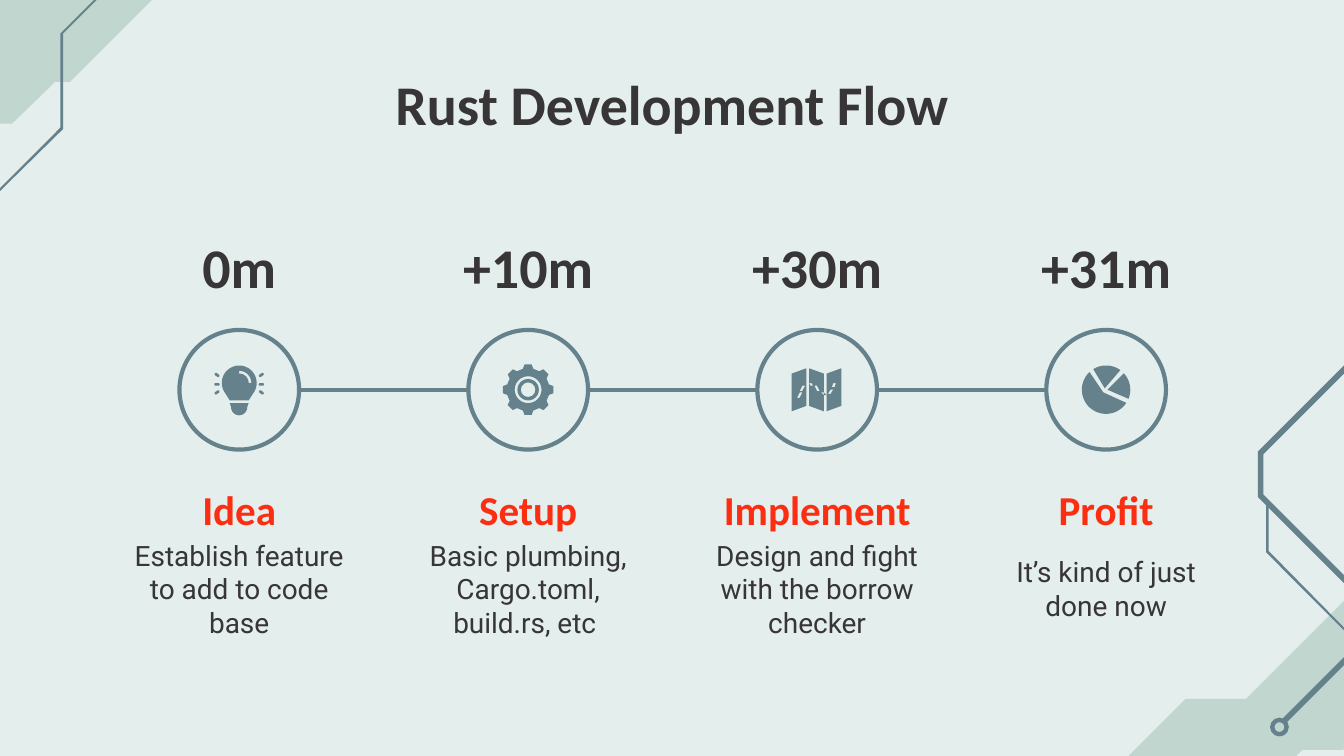
from dataclasses import dataclass
from math import cos, radians, sin

from lxml import etree
from pptx import Presentation
from pptx.dml.color import RGBColor
from pptx.enum import shapes, text
from pptx.oxml import ns
from pptx.util import Inches, Pt


@dataclass(frozen=True)
class Theme:
    bg: str = "E3EEED"
    mint: str = "C1D6CE"
    slate: str = "64818C"
    ink: str = "383536"
    red: str = "FC2E12"
    head: str = "Calibri"
    body: str = "Roboto"
    title: float = 30
    step: float = 22
    note: float = 15
    line: float = 2.25


T = Theme()


def write(tf, words, size=T.note, font=T.body, color=T.ink, bold=False,
          anchor=text.MSO_ANCHOR.MIDDLE):
    """Fill a text frame with one centred paragraph."""
    tf.word_wrap = True
    tf.auto_size = text.MSO_AUTO_SIZE.NONE
    tf.vertical_anchor = anchor
    tf.margin_left = tf.margin_right = tf.margin_top = tf.margin_bottom = Inches(0.1)
    p = tf.paragraphs[0]
    p.alignment = text.PP_ALIGN.CENTER
    r = p.add_run()
    r.text = words
    r.font.size, r.font.name, r.font.bold = Pt(size), font, bold
    r.font.color.rgb = RGBColor.from_string(color)


def arc(cx, cy, radius, start, end, n=24):
    """Points on a circle, in degrees clockwise from the right."""
    angles = [radians(start + (end - start) * i / n) for i in range(n + 1)]
    return [(cx + radius * cos(a), cy + radius * sin(a)) for a in angles]


class Deck:
    def __init__(self, theme, width):
        self.theme = theme
        self.prs = Presentation()
        self.prs.slide_width = Inches(width)
        self.prs.slide_height = Inches(width * 9 / 16)
        self.s = None

    def slide(self):
        self.s = self.prs.slides.add_slide(self.prs.slide_layouts[5])
        fill = self.s.background.fill
        fill.solid()
        fill.fore_color.rgb = RGBColor.from_string(self.theme.bg)

    def title(self, words, x, y, w, h):
        sp = self.s.shapes.title
        sp.left, sp.top, sp.width, sp.height = map(Inches, (x, y, w, h))
        write(sp.text_frame, words, size=self.theme.title, font=self.theme.head,
              bold=True, anchor=text.MSO_ANCHOR.TOP)

    def label(self, words, x, y, w, h, **fmt):
        sp = self.s.shapes.add_textbox(*map(Inches, (x, y, w, h)))
        write(sp.text_frame, words, **fmt)

    def paint(self, sp, fill=None, line=None):
        sp.shadow.inherit = False
        if fill:
            sp.fill.solid()
            sp.fill.fore_color.rgb = RGBColor.from_string(fill)
        else:
            sp.fill.background()
        if line:
            sp.line.color.rgb = RGBColor.from_string(line)
            sp.line.width = Pt(self.theme.line)
        else:
            sp.line.fill.background()

    def shape(self, kind, x, y, w, h, fill=None, line=None):
        sp = self.s.shapes.add_shape(kind, *map(Inches, (x, y, w, h)))
        self.paint(sp, fill, line)
        return sp

    def outline(self, *contours, fill=T.slate):
        """One filled freeform; contours after the first cut holes."""
        loops = [[(Inches(x), Inches(y)) for x, y in c] for c in contours]
        fb = self.s.shapes.build_freeform(*loops[0][0])
        fb.add_line_segments(loops[0][1:])
        for loop in loops[1:]:
            fb.move_to(*loop[0])
            fb.add_line_segments(loop[1:])
        self.paint(fb.convert_to_shape(), fill)

    def line(self, x1, y1, x2, y2):
        cx = self.s.shapes.add_connector(
            shapes.MSO_CONNECTOR.STRAIGHT, *map(Inches, (x1, y1, x2, y2)))
        cx.line.color.rgb = RGBColor.from_string(self.theme.slate)
        cx.line.width = Pt(self.theme.line)
        etree.SubElement(cx._element.spPr, ns.qn("a:effectLst"))


def corners(d):
    # Top left
    d.outline([(1.19, -0.72), (0.65, -0.18), (0.16, -0.18), (-0.94, 0.92),
               (0.09, 0.92), (0.41, 0.61), (0.52, 0.61), (1.85, -0.72)], fill=T.mint)
    d.outline([(1.21, -0.51), (0.45, 0.25), (0.45, 0.95), (-0.12, 1.52),
               (-0.11, 1.53), (0.47, 0.96), (0.47, 0.25), (1.22, -0.5)])
    # Bottom right
    d.outline([(10.27, 4.2), (9.27, 5.2), (8.82, 5.2), (8.25, 5.77), (8.25, 6.03),
               (7.89, 6.39), (8.87, 6.39), (9.69, 5.58), (9.99, 5.58),
               (10.58, 4.99), (10.58, 4.83), (11.21, 4.2)], fill=T.mint)
    d.outline([(12.18, 1.32), (11.21, 2.29), (10.43, 2.29), (9.36, 3.36), (9.36, 3.7),
               (10.01, 4.35), (10.01, 4.88), (9.53, 5.36), (9.56, 5.39), (10.05, 4.9),
               (10.05, 4.33), (9.4, 3.68), (9.4, 3.38), (10.45, 2.33),
               (11.22, 2.33), (12.21, 1.34)])
    d.outline([(9.42, 3.74), (9.42, 4.11), (10.02, 4.71), (10.03, 4.7),
               (9.44, 4.1), (9.44, 3.74)])
    sp = d.shape(shapes.MSO_SHAPE.DONUT, 9.45, 5.34, 0.14, 0.14, T.slate)
    sp.adjustments[0] = 0.24


# Icons, each drawn around the centre of its circle
def bulb(d, x, y):
    cy = y - 0.05
    d.outline(arc(x, cy, 0.13, 140, 400) + [(x + 0.07, y + 0.08), (x - 0.07, y + 0.08)],
              arc(x, cy, 0.09, -90, 0) + arc(x, cy, 0.07, 0, -90))
    d.outline([(x - 0.07, y + 0.1), (x + 0.07, y + 0.1)]
              + arc(x, y + 0.13, 0.06, 0, 180))
    for side in (-1, 1):
        for dy, turn in ((-0.11, -35), (-0.04, 0), (0.02, 35)):
            sp = d.shape(shapes.MSO_SHAPE.ROUNDED_RECTANGLE,
                         x + side * 0.165 - 0.02, y + dy - 0.01, 0.04, 0.02, T.slate)
            sp.adjustments[0] = 0.5
            sp.rotation = side * turn


def gear(d, x, y):
    rim = [arc(x, y, radius, 45 * k + a, 45 * k + a, 1)[0]
           for k in range(8)
           for a, radius in ((-14, 0.16), (-8, 0.19), (8, 0.19), (14, 0.16))]
    d.outline(rim, arc(x, y, 0.1, 0, 360))
    sp = d.shape(shapes.MSO_SHAPE.DONUT, x - 0.08, y - 0.08, 0.16, 0.16, T.slate)
    sp.adjustments[0] = 0.16


def folded_map(d, x, y):
    def dash(dx, dy, w, h):
        px, py = x + dx, y + dy
        return [(px, py), (px + 0.02, py), (px + 0.02 + w, py + h), (px + w, py + h)]

    panels = (
        (-0.19, -0.12, -0.16, [(-0.11, -0.03, -0.02, 0.04), (-0.13, 0.02, -0.02, 0.04)]),
        (-0.06, -0.16, -0.12, [(-0.06, -0.05, 0.01, 0.02), (-0.02, -0.03, 0.02, 0.04),
                               (0.03, 0.02, 0.02, 0.02)]),
        (0.07, -0.12, -0.16, [(0.12, -0.05, -0.01, 0.03), (0.1, 0, -0.02, 0.03)]),
    )
    for dx, left, right, dashes in panels:
        x1, x2 = x + dx, x + dx + 0.11
        d.outline([(x1, y + left), (x2, y + right), (x2, y + right + 0.28),
                   (x1, y + left + 0.28)], *[dash(*m) for m in dashes])


def pie(d, x, y):
    for dx, dy, start, end in ((-0.02, 0.02, 33, 227), (-0.01, -0.01, 238, 306),
                               (0.01, 0, -43, 22)):
        d.outline(arc(x, y, 0.18, start, end) + [(x + dx, y + dy)])


STEPS = [
    ("0m", "Idea", "Establish feature to add to code base", bulb),
    ("+10m", "Setup", "Basic plumbing, Cargo.toml, build.rs, etc ", gear),
    ("+30m", "Implement", "Design and fight with the borrow checker", folded_map),
    ("+31m", "Profit", "It’s kind of just done now", pie),
]


def main():
    d = Deck(T, 10)
    d.slide()
    corners(d)
    d.title("Rust Development Flow", 0.79, 0.42, 8.42, 0.65)

    # Timeline
    first, pitch, y, size = 1.78, 2.15, 2.9, 0.89
    for i, (time, name, note, icon) in enumerate(STEPS):
        x = first + i * pitch
        if i:
            d.line(x - pitch + size / 2, y, x - size / 2, y)
        d.shape(shapes.MSO_SHAPE.OVAL, x - size / 2, y - size / 2, size, size, line=T.slate)
        icon(d, x, y)
        d.label(time, x - 0.84, 1.69, 1.68, 0.58, size=T.title, font=T.head, bold=True)
        d.label(name, x - 0.99, 3.58, 1.98, 0.41, size=T.step, font=T.head,
                color=T.red, bold=True)
        d.label(note, x - 0.99, 4.11, 1.98, 0.54)

    d.prs.save("out.pptx")


if __name__ == "__main__":
    main()
